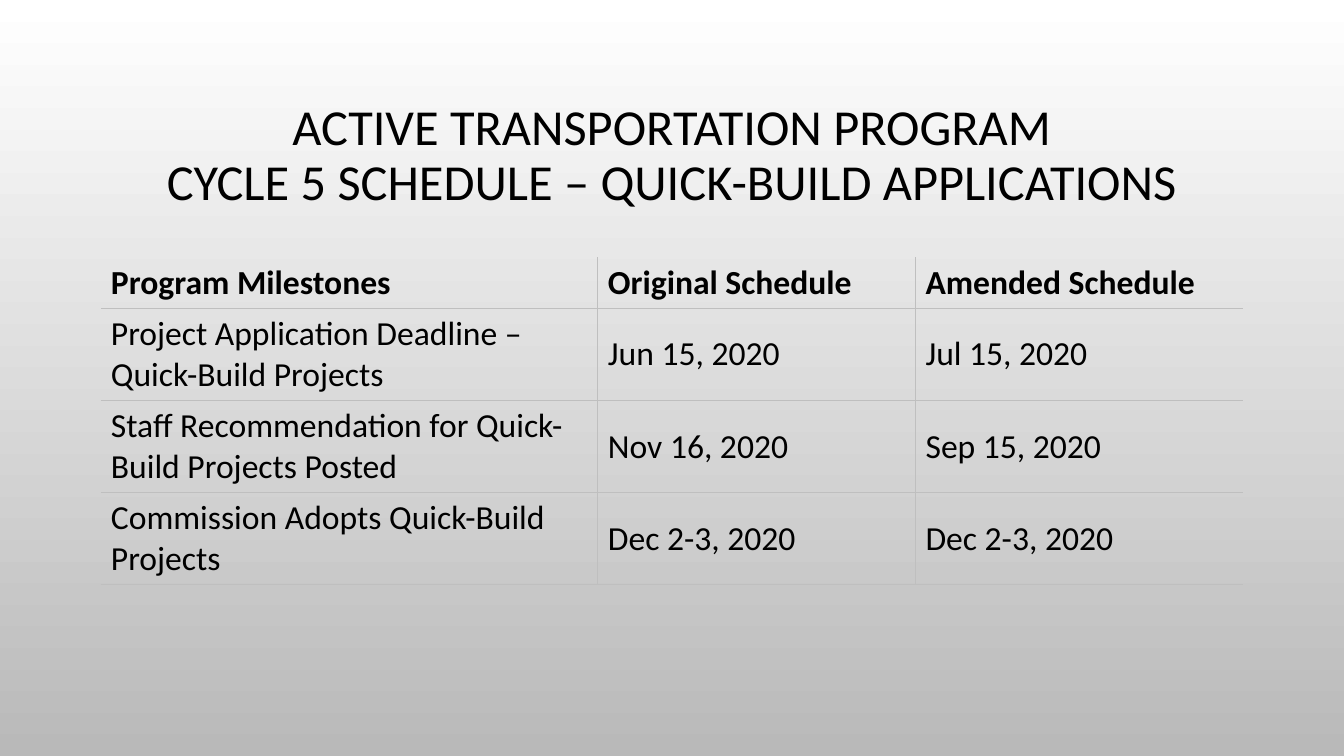
from lxml import etree
from pptx import Presentation
from pptx.dml.color import RGBColor
from pptx.enum.text import MSO_ANCHOR, PP_ALIGN
from pptx.oxml.ns import qn
from pptx.util import Inches, Pt

MIDDLE = MSO_ANCHOR.MIDDLE
LEFT, CENTER = PP_ALIGN.LEFT, PP_ALIGN.CENTER

FONT = "Calibri"
COLORS = {"top": "FFFFFF", "bottom": "B9B9B9", "text": "000000", "rule": "BFBFBF"}

TITLE = "ACTIVE TRANSPORTATION PROGRAM\vCYCLE 5 SCHEDULE – QUICK-BUILD APPLICATIONS"
COL_WIDTHS = [4.93, 3.15, 3.25]
HEADER_HEIGHT, ROW_HEIGHT = 0.51, 0.91
SCHEDULE = [
    ("Program Milestones", "Original Schedule", "Amended Schedule"),
    ("Project Application Deadline – Quick-Build Projects", "Jun 15, 2020", "Jul 15, 2020"),
    ("Staff Recommendation for Quick-Build Projects Posted", "Nov 16, 2020", "Sep 15, 2020"),
    ("Commission Adopts Quick-Build Projects", "Dec 2-3, 2020", "Dec 2-3, 2020"),
]


def write(tf, text, size, bold=False, align=LEFT, spacing=1.0):
    p = tf.paragraphs[0]
    p.text = text
    p.alignment = align
    p.line_spacing = spacing
    for r in p.runs:
        r.font.name = FONT
        r.font.size = Pt(size)
        r.font.bold = bold
        r.font.color.rgb = RGBColor.from_string(COLORS["text"])


def set_borders(cell, **sides):
    """Draw a thin rule on each side that is true and clear the others."""
    tcPr = cell._tc.get_or_add_tcPr()
    for side in ("L", "R", "T", "B"):
        ln = etree.SubElement(tcPr, qn(f"a:ln{side}"), w=str(Pt(1)))
        if sides[side]:
            fill = etree.SubElement(ln, qn("a:solidFill"))
            etree.SubElement(fill, qn("a:srgbClr"), val=COLORS["rule"])
        else:
            etree.SubElement(ln, qn("a:noFill"))


def add_background(s):
    fill = s.background.fill
    fill.gradient()
    fill.gradient_angle = 270
    for stop, key in zip(fill.gradient_stops, ("top", "bottom")):
        stop.color.rgb = RGBColor.from_string(COLORS[key])


def add_title(s, left, top, width, height):
    sp = s.shapes.title
    sp.left, sp.top = Inches(left), Inches(top)
    sp.width, sp.height = Inches(width), Inches(height)
    tf = sp.text_frame
    tf.word_wrap = True
    tf.vertical_anchor = MIDDLE
    write(tf, TITLE, 36, align=CENTER, spacing=0.9)


def add_schedule(s, left, top, width):
    rows, cols = len(SCHEDULE), len(COL_WIDTHS)
    height = HEADER_HEIGHT + ROW_HEIGHT * (rows - 1)
    table = s.shapes.add_table(
        rows, cols, Inches(left), Inches(top), Inches(width), Inches(height)
    ).table
    table.first_row = table.horz_banding = False
    for column, col_width in zip(table.columns, COL_WIDTHS):
        column.width = Inches(col_width)
    for i, texts in enumerate(SCHEDULE):
        table.rows[i].height = Inches(ROW_HEIGHT if i else HEADER_HEIGHT)
        for j, text in enumerate(texts):
            cell = table.cell(i, j)
            cell.vertical_anchor = MIDDLE
            # Inner rules and the bottom edge only
            set_borders(cell, L=j > 0, R=j < cols - 1, T=i > 0, B=True)
            cell.fill.background()
            write(cell.text_frame, text, 24, bold=i == 0)


def main():
    prs = Presentation()
    prs.slide_width, prs.slide_height = Inches(13.33), Inches(7.5)
    s = prs.slides.add_slide(prs.slide_layouts[5])
    add_background(s)
    add_title(s, 1, 0.68, 11.33, 1.75)
    add_schedule(s, 1, 2.55, 11.33)
    prs.save("out.pptx")


if __name__ == "__main__":
    main()
